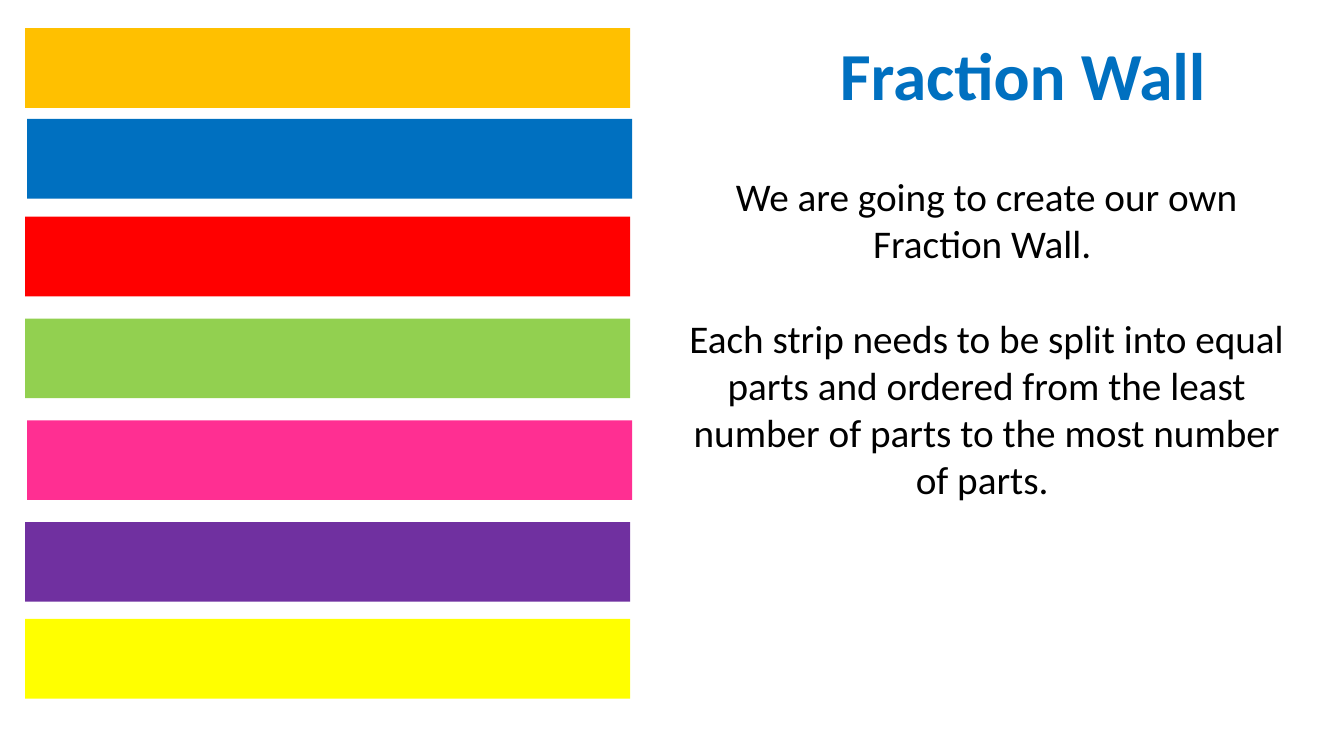
import pptx
import pptx.dml.color
import pptx.enum.shapes
import pptx.enum.text
import pptx.util
from lxml import etree

RGBColor = pptx.dml.color.RGBColor
ORANGE = RGBColor(0xFF, 0xC0, 0x00)
BLUE = RGBColor(0x00, 0x70, 0xC0)
RED = RGBColor(0xFF, 0x00, 0x00)
GREEN = RGBColor(0x92, 0xD0, 0x50)
PINK = RGBColor(0xFF, 0x2F, 0x92)
PURPLE = RGBColor(0x70, 0x30, 0xA0)
YELLOW = RGBColor(0xFF, 0xFF, 0x00)
BLACK = RGBColor(0x00, 0x00, 0x00)

# The page is a fine grid of 1333 columns by 750 rows.
CELL = pptx.util.Inches(0.01)
COLUMNS, ROWS = 1333, 750
STRIP_COLUMNS, STRIP_ROWS = 600, 79
LINE_GAP = 34

# Colour, first column and first row of each strip.
STRIPS = [
    (ORANGE, 25, 28),
    (BLUE, 27, 118),
    (RED, 25, 215),
    (GREEN, 25, 316),
    (PINK, 27, 417),
    (PURPLE, 25, 518),
    (YELLOW, 25, 614),
]

INSTRUCTIONS = [
    "We are going to create our own Fraction Wall. ",
    "Each strip needs to be split into equal parts and ordered from the least "
    "number of parts to the most number of parts. ",
]


def cells(*counts):
    return [count * CELL for count in counts]


def add_strip(page, colour, column, row):
    strip = page.shapes.add_shape(
        pptx.enum.shapes.MSO_SHAPE.RECTANGLE,
        *cells(column, row, STRIP_COLUMNS, STRIP_ROWS))
    strip.shadow.inherit = False
    strip.fill.solid()
    strip.fill.fore_color.rgb = colour
    strip.line.fill.background()


def remove_bullet(para):
    properties = para._p.get_or_add_pPr()
    properties.set("marL", "0")
    properties.set("indent", "0")
    etree.SubElement(properties, pptx.oxml.ns.qn("a:buNone"))


def fill_placeholder(box, place, texts, size, colour, bold=False):
    """Move a placeholder to its grid place and write centred paragraphs."""
    box.left, box.top, box.width, box.height = cells(*place)
    frame = box.text_frame
    frame.word_wrap = True
    frame.auto_size = pptx.enum.text.MSO_AUTO_SIZE.SHAPE_TO_FIT_TEXT
    frame.vertical_anchor = pptx.enum.text.MSO_ANCHOR.TOP
    frame.text = "\n".join(texts)
    for index, para in enumerate(frame.paragraphs):
        para.alignment = pptx.enum.text.PP_ALIGN.CENTER
        para.space_before = pptx.util.Pt(LINE_GAP if index else 0)
        remove_bullet(para)
        para.font.name = "Calibri"
        para.font.size = pptx.util.Pt(size)
        para.font.bold = bold
        para.font.color.rgb = colour


def main():
    deck = pptx.Presentation()
    deck.slide_width, deck.slide_height = cells(COLUMNS, ROWS)
    page = deck.slides.add_slide(deck.slide_layouts[1])
    fill_placeholder(page.shapes.title, (727, 28, 575, 91),
                     ["Fraction Wall"], 48, BLUE, bold=True)
    for strip in STRIPS:
        add_strip(page, *strip)
    fill_placeholder(page.placeholders[1], (665, 166, 627, 340),
                     INSTRUCTIONS, 28, BLACK)
    deck.save("out.pptx")


if __name__ == "__main__":
    main()
